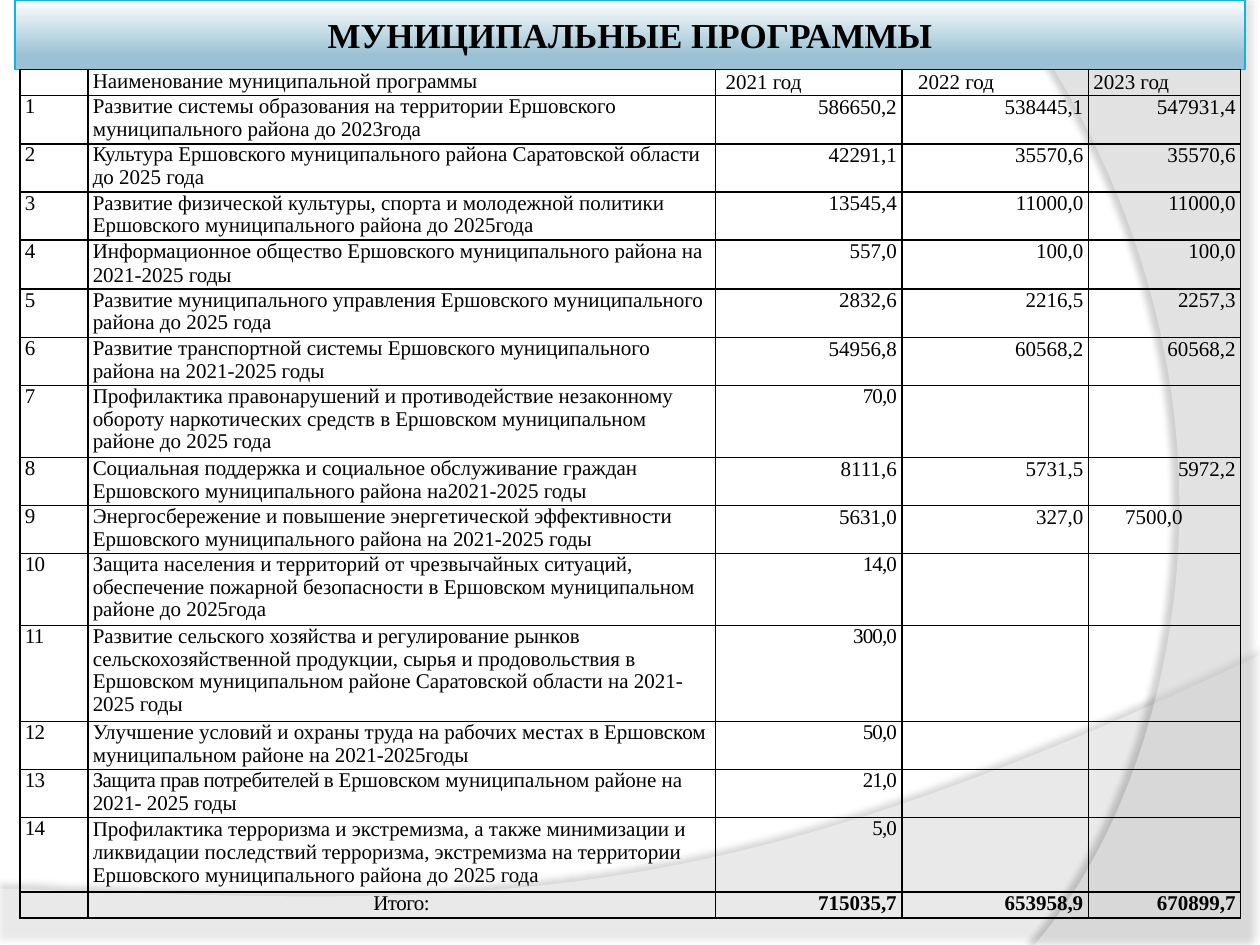
from lxml import etree
from pptx import Presentation
from pptx import util as u
from pptx.dml.color import RGBColor
from pptx.enum import text as t
from pptx.oxml import ns

FONT = "Times New Roman"
COLORS = {"text": "000000", "wave": "FFFFFF", "title_top": "FFFFFF",
          "title_bottom": "9AC2D4", "title_line": "0FB4E7"}
TITLE = "МУНИЦИПАЛЬНЫЕ ПРОГРАММЫ"
HEADER = ["Наименование муниципальной программы", "2021 год", "2022 год", "2023 год"]
HEADER_INDENTS = [0, 0.11, 0.23, 0]  # cm

# Program name, then the amounts for 2021, 2022 and 2023
PROGRAMS = [
    ("Развитие системы образования на территории Ершовского муниципального района до 2023года",
     "586650,2", "538445,1", "547931,4"),
    ("Культура Ершовского муниципального района Саратовской области до 2025 года",
     "42291,1", "35570,6", "35570,6"),
    ("Развитие физической культуры, спорта и молодежной политики Ершовского муниципального района до 2025года",
     "13545,4", "11000,0", "11000,0"),
    ("Информационное общество Ершовского муниципального района на 2021-2025 годы",
     "557,0", "100,0", "100,0"),
    ("Развитие муниципального управления Ершовского муниципального района до 2025 года",
     "2832,6", "2216,5", "2257,3"),
    ("Развитие транспортной системы Ершовского муниципального района на 2021-2025 годы",
     "54956,8", "60568,2", "60568,2"),
    ("Профилактика правонарушений и противодействие незаконному обороту наркотических средств "
     "в Ершовском муниципальном районе до 2025 года", "70,0", "", ""),
    ("Социальная поддержка и социальное обслуживание граждан Ершовского муниципального района на2021-2025 годы",
     "8111,6", "5731,5", "5972,2"),
    ("Энергосбережение и повышение энергетической эффективности Ершовского муниципального района на 2021-2025 годы",
     "5631,0", "327,0", "7500,0"),
    ("Защита населения и территорий от чрезвычайных ситуаций, обеспечение пожарной безопасности "
     "в Ершовском муниципальном районе до 2025года", "14,0", "", ""),
    ("Развитие сельского хозяйства и регулирование рынков сельскохозяйственной продукции, сырья и "
     "продовольствия в Ершовском муниципальном районе Саратовской области на 2021- 2025 годы",
     "300,0", "", ""),
    ("Улучшение условий и охраны труда на рабочих местах в Ершовском муниципальном районе на 2021-2025годы",
     "50,0", "", ""),
    ("Защита прав потребителей в |Ершовском муниципальном районе на 2021- 2025 годы",
     "21,0", "", ""),  # the part before the bar is set tighter
    ("Профилактика терроризма и экстремизма, а также минимизации и ликвидации последствий терроризма, "
     "экстремизма на территории Ершовского муниципального района до 2025 года", "5,0", "", ""),
]
TOTAL = ["Итого:", "715035,7", "653958,9", "670899,7"]
LOOSE_ROWS = (4, 14)      # names with full line spacing
INDENTED_CELL = (9, 4)    # the one amount set from the left
COLUMNS = [1.37, 12.65, 3.76, 3.76, 3.07]
ROWS = [0.53] + [0.97] * 14 + [0.53]
ROWS[4], ROWS[7], ROWS[10], ROWS[11], ROWS[14] = 0.99, 1.45, 1.45, 1.93, 1.5

# Background waves in cm: outline as a start point, then lines (1 point) or curves (3 points)
WAVES = [
    {"start": (0, 17.91), "alpha": 45, "shadow": (35, 3.5, 270),
     "steps": [[(0, 19.05)], [(25.4, 19.05)], [(25.4, 13.21)],
               [(14.2, 18.52), (9.93, 18.26), (0, 17.91)]]},
    {"start": (25.4, 0.05), "alpha": 40, "shadow": (45, 4, 180),
     "steps": [[(25.4, 19.05)], [(20.85, 19.05)],
               [(23.75, 15.72), (25.86, 7.62), (20.32, 0)]]},
]


def color(name):
    return RGBColor.from_string(COLORS[name])


def add_xml(parent, tag, **attributes):
    return etree.SubElement(parent, ns.qn(tag), {k: str(v) for k, v in attributes.items()})


def curve(start, a, b, end, count=40):
    for i in range(1, count + 1):
        f = i / count
        g = 1 - f
        yield tuple(g**3 * p + 3 * g * g * f * q + 3 * g * f * f * r + f**3 * s
                    for p, q, r, s in zip(start, a, b, end))


def add_wave(slide, wave):
    points = [wave["start"]]
    for step in wave["steps"]:
        points += step if len(step) == 1 else list(curve(points[-1], *step))
    builder = slide.shapes.build_freeform(*(u.Cm(v) for v in points[0]))
    builder.add_line_segments([(u.Cm(x), u.Cm(y)) for x, y in points[1:]], close=True)
    shape = builder.convert_to_shape()
    shape.line.fill.background()
    shape.fill.solid()
    shape.fill.fore_color.rgb = color("wave")
    properties = shape._element.spPr
    add_xml(properties.find(".//" + ns.qn("a:srgbClr")), "a:alpha", val=wave["alpha"] * 1000)
    # Soft outer shadow
    opacity, distance, angle = wave["shadow"]
    shape.shadow.inherit = False
    shadow = add_xml(properties.find(ns.qn("a:effectLst")), "a:outerShdw", blurRad=u.Pt(4),
                     dist=u.Pt(distance), dir=angle * 60000, algn="ctr", rotWithShape=0)
    tint = add_xml(shadow, "a:srgbClr", val=COLORS["text"])
    add_xml(tint, "a:alpha", val=opacity * 1000)


def style_font(font, size, bold=False):
    font.name, font.size, font.bold = FONT, u.Pt(size), bold
    font.color.rgb = color("text")


def style_cell(cell):
    cell.margin_left = cell.margin_right = u.Cm(0.1)
    cell.margin_top = cell.margin_bottom = 0
    properties = cell._tc.get_or_add_tcPr()
    for side in ("a:lnL", "a:lnR", "a:lnT", "a:lnB"):
        line = add_xml(properties, side, w=u.Pt(1))
        add_xml(add_xml(line, "a:solidFill"), "a:srgbClr", val=COLORS["text"])
    cell.fill.background()


def fill_cell(cell, content, align=t.PP_ALIGN.LEFT, spacing=None, tracking=(0,), indent=0, bold=False):
    style_cell(cell)
    paragraph = cell.text_frame.paragraphs[0]
    if not content:
        add_xml(paragraph._p, "a:endParaRPr", sz=1200)
        return
    paragraph.alignment = align
    if spacing:
        paragraph.line_spacing = spacing
    if indent:
        paragraph._p.get_or_add_pPr().set("marL", str(u.Cm(indent)))
    for part, track in zip(content.split("|"), tracking):
        run = paragraph.add_run()
        run.text = part
        run._r.get_or_add_rPr().set("spc", str(track))
    style_font(paragraph.font, 12, bold)


def add_program_table(slide):
    frame = slide.shapes.add_table(len(ROWS), len(COLUMNS), u.Cm(0.4), u.Cm(1.4),
                                   u.Cm(sum(COLUMNS)), u.Cm(sum(ROWS)))
    table = frame.table
    table.first_row = table.horz_banding = False
    for column, width in zip(table.columns, COLUMNS):
        column.width = u.Cm(width)
    for row, height in zip(table.rows, ROWS):
        row.height = u.Cm(height)
    last = len(ROWS) - 1
    right = t.PP_ALIGN.RIGHT
    # Header row
    fill_cell(table.cell(0, 0), "")
    for c, (label, indent) in enumerate(zip(HEADER, HEADER_INDENTS), 1):
        fill_cell(table.cell(0, c), label, spacing=u.Pt(13.9) if c > 1 else None, indent=indent)
    # Program rows
    for r, (name, *amounts) in enumerate(PROGRAMS, 1):
        fill_cell(table.cell(r, 0), str(r), spacing=0.97, tracking=(-40,))
        fill_cell(table.cell(r, 1), name, spacing=None if r in LOOSE_ROWS else 0.97,
                  tracking=(-30, 0) if "|" in name else (0,))
        single = not amounts[1]
        for c, amount in enumerate(amounts, 2):
            if (r, c) == INDENTED_CELL:
                fill_cell(table.cell(r, c), amount, indent=0.64)
            else:
                fill_cell(table.cell(r, c), amount, right, 0.97 if single else None,
                          (-50 if single else 0,))
    # Total row
    fill_cell(table.cell(last, 0), "")
    fill_cell(table.cell(last, 1), TOTAL[0], t.PP_ALIGN.CENTER, 0.97, (-30,))
    for c, amount in enumerate(TOTAL[1:], 2):
        fill_cell(table.cell(last, c), amount, right, bold=True)


def format_title(title):
    title.left, title.top, title.width, title.height = (u.Cm(v) for v in (0.3, 0, 24.8, 1.4))
    title.fill.gradient()
    title.fill.gradient_angle = 270
    for stop, name, position in zip(title.fill.gradient_stops, ("title_top", "title_bottom"), (0, 0.8)):
        stop.color.rgb = color(name)
        stop.position = position
    title.line.color.rgb = color("title_line")
    title.line.width = u.Pt(0.75)
    frame = title.text_frame
    frame.text = TITLE
    frame.word_wrap = True
    frame.auto_size = t.MSO_AUTO_SIZE.NONE
    frame.vertical_anchor = t.MSO_ANCHOR.MIDDLE
    frame.margin_left = frame.margin_right = frame.margin_top = frame.margin_bottom = u.Cm(0.13)
    paragraph = frame.paragraphs[0]
    paragraph.alignment = t.PP_ALIGN.CENTER
    style_font(paragraph.font, 20, True)


def main():
    presentation = Presentation()
    presentation.slide_width, presentation.slide_height = u.Cm(25.4), u.Cm(19.05)
    slide = presentation.slides.add_slide(presentation.slide_layouts[5])
    for wave in WAVES:
        add_wave(slide, wave)
    title = slide.shapes.title
    slide.shapes._spTree.append(title._element)  # in front of the waves
    format_title(title)
    add_program_table(slide)
    presentation.save("out.pptx")


if __name__ == "__main__":
    main()
